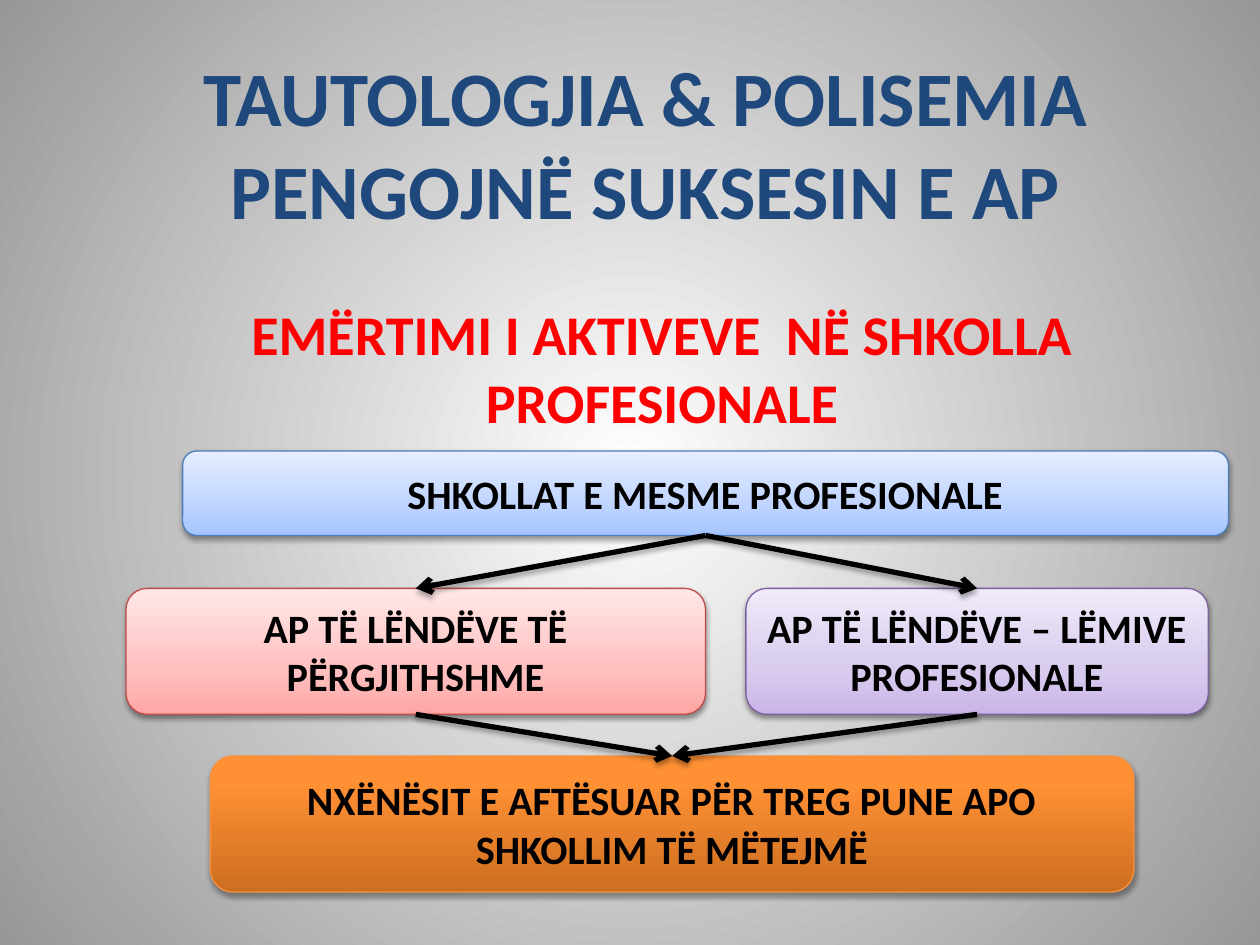
from lxml import etree
from pptx import Presentation
from pptx.dml.color import RGBColor
from pptx.enum import shapes, text
from pptx.oxml.ns import qn
from pptx.util import Inches, Pt

TITLE = "TAUTOLOGJIA & POLISEMIA PENGOJNË SUKSESIN E AP"
SUBTITLE = "EMËRTIMI I AKTIVEVE  NË SHKOLLA PROFESIONALE"
COLORS = {"title": "1F497D", "subtitle": "FF0000", "ink": "000000"}
FONT = "Calibri"
BACKGROUND = [(0, "FFFFFF"), (100, "979797")]
SOFT = (1.6, 38)     # shadow distance in points, opacity in percent
STRONG = (1.8, 35)

# name: (text, (left, top, width, height), gradient from the bottom up, outline, shadow)
BOXES = {
    "schools": ("SHKOLLAT E MESME PROFESIONALE", (1.45, 3.58, 8.3, 0.67),
                [(0, "A4C4FF"), (35, "BFD4FF"), (100, "E6EEFF")], "4B7EBC", SOFT),
    "general": ("AP TË LËNDËVE TË PËRGJITHSHME", (1, 4.67, 4.6, 1),
                [(0, "FFA6A5"), (35, "FFC0BF"), (100, "FFE7E7")], "BF4C48", SOFT),
    "vocational": ("AP TË LËNDËVE – LËMIVE PROFESIONALE", (5.92, 4.67, 3.67, 1),
                   [(0, "C9B5E8"), (35, "D8CBEE"), (100, "F0EAF9")], "7D60A0", SOFT),
    "students": ("NXËNËSIT E AFTËSUAR PËR TREG PUNE APO SHKOLLIM TË MËTEJMË",
                 (1.67, 6, 7.33, 1.08),
                 [(0, "CC6E20"), (80, "FF9034"), (100, "FF9136")], "F69240", STRONG),
}
ARROWS = [("schools", "general"), ("schools", "vocational"),
          ("general", "students"), ("vocational", "students")]


def add_xml(parent, tag, **attrs):
    return etree.SubElement(parent, qn(tag), {k: str(v) for k, v in attrs.items()})


def set_gradient(fill, parent, stops, radial=False):
    """Put a gradient where the solid fill of parent stands."""
    fill.solid()
    grad = etree.Element(qn("a:gradFill"), rotWithShape="1")
    stop_list = add_xml(grad, "a:gsLst")
    for pos, color in stops:
        add_xml(add_xml(stop_list, "a:gs", pos=pos * 1000), "a:srgbClr", val=color)
    if radial:
        center = add_xml(grad, "a:path", path="circle")
        add_xml(center, "a:fillToRect", l=50000, t=50000, r=50000, b=50000)
    else:
        add_xml(grad, "a:lin", ang=270 * 60000, scaled=0)
    parent.replace(parent.find(qn("a:solidFill")), grad)


def set_shadow(sp_pr, distance, opacity):
    effects = add_xml(sp_pr, "a:effectLst")
    shadow = add_xml(effects, "a:outerShdw", blurRad=Pt(3.1), dist=Pt(distance),
                     dir=90 * 60000, rotWithShape=0)
    color = add_xml(shadow, "a:srgbClr", val=COLORS["ink"])
    add_xml(color, "a:alpha", val=opacity * 1000)


def set_text(sp, content, size, color):
    tf = sp.text_frame
    tf.word_wrap = True
    p = tf.paragraphs[0]
    p.text = content
    p.alignment = text.PP_ALIGN.CENTER
    font = p.runs[0].font
    font.name, font.size, font.bold = FONT, Pt(size), True
    font.color.rgb = RGBColor.from_string(color)


def place(sp, *box):
    sp.left, sp.top, sp.width, sp.height = map(Inches, box)


prs = Presentation()
prs.slide_width, prs.slide_height = Inches(10), Inches(7.5)
s = prs.slides.add_slide(prs.slide_layouts[0])

# Background
bg_fill = s.background.fill
bg_fill.solid()
set_gradient(bg_fill, next(s.element.iter(qn("p:bgPr"))), BACKGROUND, radial=True)

# Title and subtitle
title, subtitle = s.placeholders
place(title, 0.75, 0.17, 8.75, 1.92)
set_text(title, TITLE, 44, COLORS["title"])
title.text_frame.vertical_anchor = text.MSO_ANCHOR.MIDDLE
place(subtitle, 0.58, 2.33, 9.35, 4.9)
set_text(subtitle, SUBTITLE, 32, COLORS["subtitle"])

# Boxes
nodes = {}
for name, (label, box, stops, outline, shadow) in BOXES.items():
    sp = s.shapes.add_shape(shapes.MSO_SHAPE.ROUNDED_RECTANGLE, *map(Inches, box))
    set_gradient(sp.fill, sp.element.spPr, stops)
    sp.line.color.rgb = RGBColor.from_string(outline)
    sp.line.width = Pt(0.75)
    set_shadow(sp.element.spPr, *shadow)
    set_text(sp, label, 23, COLORS["ink"])
    sp.text_frame.vertical_anchor = text.MSO_ANCHOR.MIDDLE
    nodes[name] = sp

# Arrows from bottom centre (site 2) to top centre (site 0)
for start, end in ARROWS:
    arrow = s.shapes.add_connector(shapes.MSO_CONNECTOR.STRAIGHT, 0, 0, 0, 0)
    arrow.begin_connect(nodes[start], 2)
    arrow.end_connect(nodes[end], 0)
    arrow.line.color.rgb = RGBColor.from_string(COLORS["ink"])
    arrow.line.width = Pt(3)
    sp_pr = arrow._element.spPr
    add_xml(sp_pr.find(qn("a:ln")), "a:tailEnd", type="arrow")
    set_shadow(sp_pr, *STRONG)

prs.save("out.pptx")
